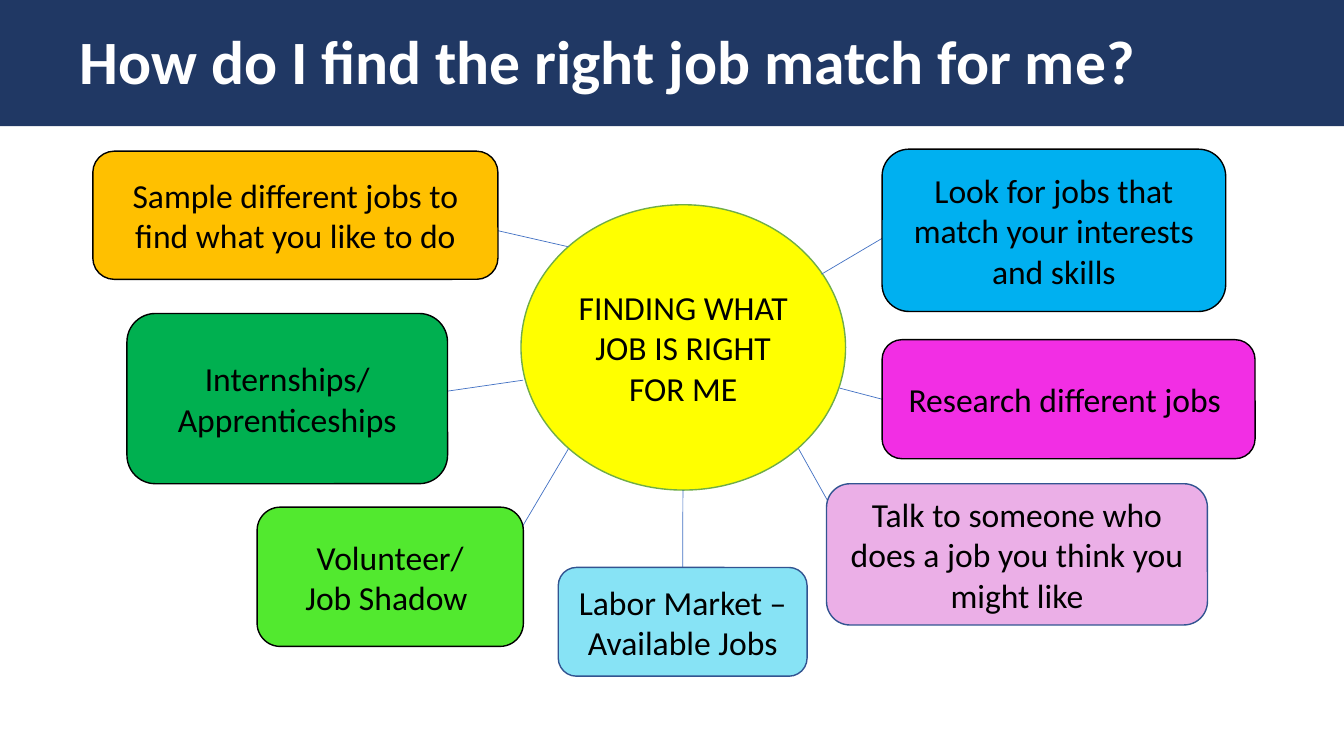
"""Build a slide that maps ways of finding the right job."""
from dataclasses import dataclass
from typing import Optional

from lxml.etree import SubElement
from pptx import Presentation
from pptx.dml.color import RGBColor as Rgb
from pptx.enum.shapes import MSO_CONNECTOR as Link, MSO_SHAPE as Form
from pptx.enum.text import MSO_ANCHOR as Anchor, MSO_AUTO_SIZE as Fit, PP_ALIGN as Align
from pptx.oxml.ns import qn
from pptx.shapes.autoshape import Shape
from pptx.slide import Slide
from pptx.util import Cm, Pt


@dataclass(frozen=True)
class Theme:
    font: str = "Calibri"
    head: int = 44
    body: int = 24
    edge: float = 1
    thin: float = 0.5
    navy: str = "203864"
    white: str = "FFFFFF"
    black: str = "000000"
    blue: str = "4472C4"
    steel: str = "325491"
    green: str = "70AD47"
    yellow: str = "FFFF00"
    sky: str = "00B0F0"
    pink: str = "F22EE4"
    gold: str = "FFC000"
    leaf: str = "00B050"
    lime: str = "52E92F"
    aqua: str = "87E3F5"
    mauve: str = "EBAFE7"


@dataclass(frozen=True)
class Box:
    left: float
    top: float
    width: float
    height: float
    fill: str
    line: Optional[str] = None
    text: tuple[str, ...] = ()
    form: Form = Form.ROUNDED_RECTANGLE


@dataclass(frozen=True)
class Spoke:
    start: tuple[float, float]
    end: tuple[float, float]
    card: int
    side: Optional[int] = None


THEME = Theme()
WIDE, HIGH = 33.87, 19.05
TITLE = "How do I find the right job match for me?"
BAND = Box(0, 0, WIDE, 3.18, THEME.navy, form=Form.RECTANGLE)
HUB = Box(13.13, 5.16, 8.18, 7.19, THEME.yellow, THEME.green,
          ("FINDING WHAT JOB IS RIGHT FOR ME",), Form.OVAL)
CARDS = (
    Box(22.23, 3.76, 8.66, 4.09, THEME.sky, THEME.black,
        ("Look for jobs that match your interests and skills",)),
    Box(22.23, 8.56, 9.4, 3, THEME.pink, THEME.black, ("Research different jobs ",)),
    Box(2.34, 3.81, 10.21, 3.23, THEME.gold, THEME.black,
        ("Sample different jobs to find what you like to do",)),
    Box(3.2, 7.9, 8.08, 4.29, THEME.leaf, THEME.black, ("Internships/", "Apprenticeships")),
    Box(6.48, 12.78, 6.71, 3.51, THEME.lime, THEME.black, ("Volunteer/", "Job Shadow ")),
    Box(14.07, 14.3, 6.27, 2.74, THEME.aqua, THEME.steel, ("Labor Market –Available Jobs",)),
    Box(20.83, 12.19, 9.6, 3.56, THEME.mauve, THEME.steel,
        ("Talk to someone who does a job you think you might like",)),
)
SPOKES = (
    Spoke((20.7, 6.91), (22.68, 5.74), 0),
    Spoke((21.16, 9.78), (22.23, 10.06), 1, 1),
    Spoke((14.33, 6.22), (12.01, 5.69), 2),
    Spoke((13.18, 9.58), (11.25, 9.86), 3),
    Spoke((14.33, 11.3), (13.11, 13.36), 4),
    Spoke((17.21, 12.35), (17.21, 14.3), 5, 0),
    Spoke((20.12, 11.3), (21.16, 13.16), 6),
)


def write(shape: Shape, lines: tuple[str, ...], size: int, color: str,
          align: Align, bold: bool = False) -> None:
    frame = shape.text_frame
    frame.word_wrap = True
    frame.auto_size = Fit.NONE
    frame.vertical_anchor = Anchor.MIDDLE
    for i, line in enumerate(lines):
        para = frame.add_paragraph() if i else frame.paragraphs[0]
        para.alignment = align
        run = para.add_run()
        run.text = line
        run.font.name = THEME.font
        run.font.size = Pt(size)
        run.font.bold = bold
        run.font.color.rgb = Rgb.from_string(color)


def draw(slide: Slide, box: Box) -> Shape:
    shape = slide.shapes.add_shape(box.form, Cm(box.left), Cm(box.top),
                                   Cm(box.width), Cm(box.height))
    shape.shadow.inherit = False
    shape.fill.solid()
    shape.fill.fore_color.rgb = Rgb.from_string(box.fill)
    if box.line:
        shape.line.color.rgb = Rgb.from_string(box.line)
        shape.line.width = Pt(THEME.edge)
    else:
        shape.line.fill.background()
    write(shape, box.text, THEME.body, THEME.black, Align.CENTER)
    return shape


def join(slide: Slide, spoke: Spoke, hub: Shape, cards: list[Shape]) -> None:
    line = slide.shapes.add_connector(Link.STRAIGHT, *map(Cm, spoke.start + spoke.end))
    if spoke.side is not None:
        line.end_connect(cards[spoke.card], spoke.side)
    line.line.color.rgb = Rgb.from_string(THEME.blue)
    line.line.width = Pt(THEME.thin)
    SubElement(line._element.spPr, qn("a:effectLst"))
    hub._element.addnext(line._element)


def main() -> None:
    deck = Presentation()
    deck.slide_width, deck.slide_height = Cm(WIDE), Cm(HIGH)
    slide = deck.slides.add_slide(deck.slide_layouts[5])
    title = slide.shapes.title
    title.left, title.top, title.width, title.height = map(Cm, (1.75, 0, 31.88, 3.23))
    write(title, (TITLE,), THEME.head, THEME.white, Align.LEFT, True)
    title.text_frame.paragraphs[0].line_spacing = 0.9
    band = draw(slide, BAND)
    title._element.addprevious(band._element)
    hub = draw(slide, HUB)
    cards = [draw(slide, card) for card in CARDS]
    for spoke in SPOKES:
        join(slide, spoke, hub, cards)
    deck.save("out.pptx")


if __name__ == "__main__":
    main()
